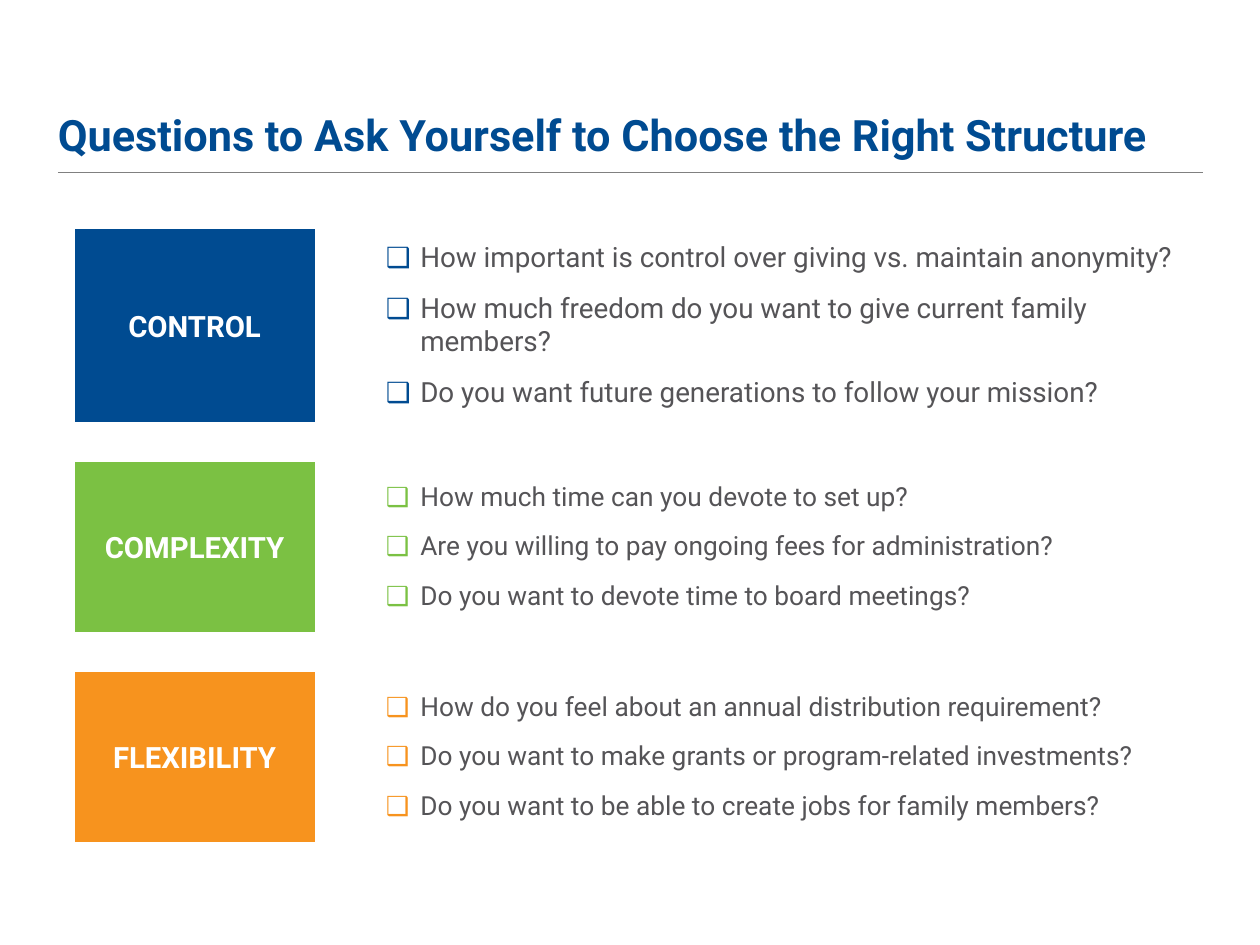
from lxml import etree
from pptx import Presentation, util as u
from pptx.dml.color import RGBColor
from pptx.enum import shapes, text
from pptx.oxml import ns

FONT = "Roboto"
BLUE, GREEN, ORANGE = "004B91", "7BC143", "F7931E"
GREY, RULE, WHITE = "555457", "808080", "FFFFFF"
NO_STYLE = "{2D5ABB26-0587-4C30-8999-92F81FD0307C}"


def rgb(value):
    return RGBColor.from_string(value)


def write(tf, lines, size, color, bold=False, align=None, spacing=None,
          after=0, bullet=None):
    for i, line in enumerate(lines):
        p = tf.add_paragraph() if i else tf.paragraphs[0]
        p.alignment, p.line_spacing = align, spacing
        p.space_before, p.space_after = u.Pt(0), u.Pt(after)
        if bullet:
            pPr = p._p.get_or_add_pPr()
            pPr.set("marL", str(u.Inches(0.81)))
            pPr.set("indent", str(u.Inches(-0.31)))
            clr = etree.SubElement(pPr, ns.qn("a:buClr"))
            etree.SubElement(clr, ns.qn("a:srgbClr"), val=bullet)
            etree.SubElement(pPr, ns.qn("a:buFont"), typeface=FONT)
            etree.SubElement(pPr, ns.qn("a:buChar"), char="❑")
        r = p.add_run()
        r.text = line
        r.font.name, r.font.size, r.font.bold = FONT, u.Pt(size), bold
        r.font.color.rgb = rgb(color)


prs = Presentation()
prs.slide_width, prs.slide_height = u.Inches(11.33), u.Inches(8.5)
s = prs.slides.add_slide(prs.slide_layouts[6])
left, width = u.Inches(0.52), u.Inches(10.3)

# Title and the rule below it
sp = s.shapes.add_textbox(left, u.Inches(0.59), width, u.Inches(0.86))
tf = sp.text_frame
tf.word_wrap = True
tf.vertical_anchor = text.MSO_ANCHOR.BOTTOM
tf.margin_left = tf.margin_top = tf.margin_right = tf.margin_bottom = 0
write(tf, ["Questions to Ask Yourself to Choose the Right Structure"], 28, BLUE,
      bold=True, spacing=0.9)

rule = s.shapes.add_connector(shapes.MSO_CONNECTOR.STRAIGHT, left, u.Inches(1.55),
                              left + width, u.Inches(1.55))
rule.line.color.rgb = rgb(RULE)
rule.line.width = u.Pt(0.25)
etree.SubElement(rule._element.spPr, ns.qn("a:effectLst"))

# Topics: label, colour, question size, questions
topics = [
    ("CONTROL", BLUE, 18, [
        "How important is control over giving vs. maintain anonymity?",
        "How much freedom do you want to give current family members?",
        "Do you want future generations to follow your mission?"]),
    ("COMPLEXITY", GREEN, 17, [
        "How much time can you devote to set up?",
        "Are you willing to pay ongoing fees for administration?",
        "Do you want to devote time to board meetings?"]),
    ("FLEXIBILITY", ORANGE, 17, [
        "How do you feel about an annual distribution requirement?",
        "Do you want to make grants or program-related investments?",
        "Do you want to be able to create jobs for family members?"]),
]

# Table grid: topic rows with narrow spacer rows between them
cols = [2.16, 0.03, 7.85]
rows = [1.53, 0.36, 1.53, 0.36, 1.53]
table = s.shapes.add_table(len(rows), len(cols), u.Inches(0.67), u.Inches(2.06),
                           u.Inches(sum(cols)), u.Inches(sum(rows))).table
table.first_row = table.horz_banding = False
table._tbl.tblPr.find(ns.qn("a:tableStyleId")).text = NO_STYLE
for col, w in zip(table.columns, cols):
    col.width = u.Inches(w)
for row, h in zip(table.rows, rows):
    row.height = u.Inches(h)
for cell in table.iter_cells():
    cell.margin_left = cell.margin_top = cell.margin_right = cell.margin_bottom = 0
    cell.vertical_anchor = text.MSO_ANCHOR.MIDDLE
    cell.fill.background()

# Labels and questions
for i, (label, color, size, questions) in enumerate(topics):
    name, asks = table.cell(2 * i, 0), table.cell(2 * i, 2)
    name.fill.solid()
    name.fill.fore_color.rgb = rgb(color)
    write(name.text_frame, [label], 19, WHITE, bold=True,
          align=text.PP_ALIGN.CENTER, spacing=1.1, after=12)
    asks.margin_left = asks.margin_top = u.Inches(0.1)
    asks.margin_right = asks.margin_bottom = u.Inches(0.1)
    write(asks.text_frame, questions, size, GREY, after=12, bullet=color)

prs.save("out.pptx")
